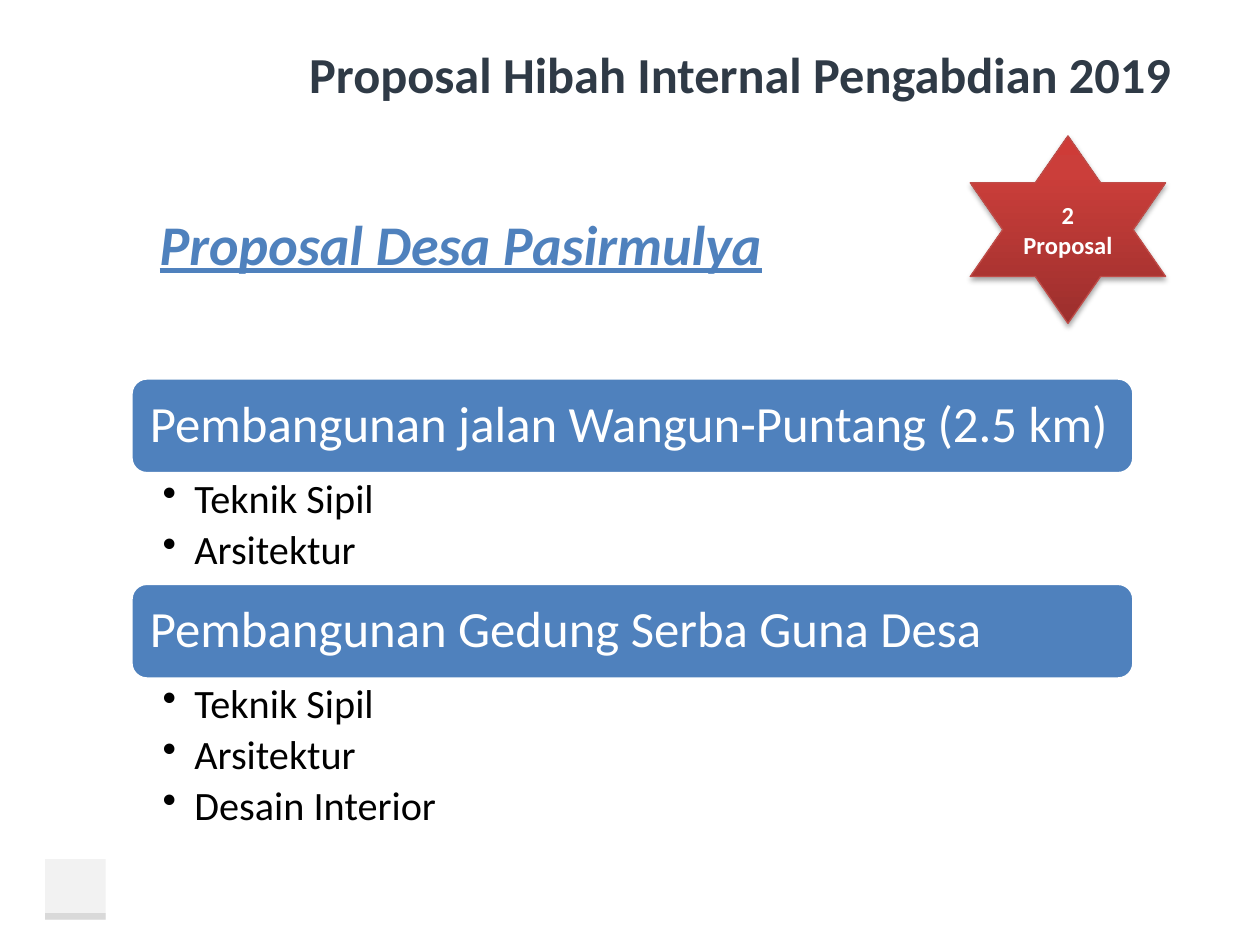
"""Build the slide on the village proposals for the 2019 internal community service grant."""
from copy import deepcopy

from lxml.etree import SubElement
from pptx import Presentation
from pptx.dml.color import RGBColor
from pptx.enum.shapes import MSO_SHAPE as Shape
from pptx.enum.text import MSO_ANCHOR as Anchor, PP_ALIGN as Align
from pptx.oxml.ns import qn
from pptx.util import Cm, Pt

color = RGBColor.from_string


def add_block(kind, left, top, width, height, fill):
    shape = slide.shapes.add_shape(kind, Cm(left), Cm(top), Cm(width), Cm(height))
    shape.shadow.inherit = False
    shape.fill.solid()
    shape.fill.fore_color.rgb = color(fill)
    shape.line.fill.background()
    return shape


def write(paragraph, text, size, fill, align=Align.LEFT, bold=False):
    paragraph.text = text
    paragraph.alignment = align
    font = paragraph.font
    font.name, font.size, font.bold = "Calibri", Pt(size), bold
    font.color.rgb = color(fill)


presentation = Presentation()
presentation.slide_width, presentation.slide_height = Cm(25.4), Cm(19.05)
slide = presentation.slides.add_slide(presentation.slide_layouts[5])

add_block(Shape.RECTANGLE, 0.91, 17.32, 1.22, 1.22, "F2F2F2")
add_block(Shape.RECTANGLE, 0.91, 18.41, 1.22, 0.13, "D9D9D9")

title = slide.shapes.title
title.left, title.top, title.width, title.height = Cm(5.72), Cm(0.61), Cm(18.42), Cm(1.73)
title.text_frame.vertical_anchor = Anchor.MIDDLE
write(title.text_frame.paragraphs[0], "Proposal Hibah Internal Pengabdian 2019", 28.8, "2F3A46", Align.CENTER, True)

subtitle = slide.shapes.add_textbox(Cm(2.97), Cm(4.09), Cm(16.71), Cm(1.63))
subtitle.text_frame.word_wrap = True
paragraph = subtitle.text_frame.paragraphs[0]
write(paragraph, "Proposal Desa Pasirmulya", 32, "4F81BD", bold=True)
paragraph.font.italic = paragraph.font.underline = True

star = add_block(Shape.STAR_6_POINT, 19.56, 2.74, 3.94, 3.78, "CB3E3A")
star.fill.gradient()
star.fill.gradient_angle = 90
stop_list = star.element.spPr.find(qn("a:gradFill")).find(qn("a:gsLst"))
stop_list.append(deepcopy(stop_list[0]))
for stop, (position, fill) in zip(star.fill.gradient_stops, [(0, "9C2F2D"), (0.8, "CB3E3A"), (1, "CE3B37")]):
    stop.position = position
    stop.color.rgb = color(fill)
star.line.color.rgb = color("BF4C48")
star.line.width = Pt(0.75)
effects = star.element.spPr.find(qn("a:effectLst"))
shadow = SubElement(effects, qn("a:outerShdw"), blurRad="40000", dist="23000", dir="5400000", rotWithShape="0")
shadow_color = SubElement(shadow, qn("a:srgbClr"), val="000000")
SubElement(shadow_color, qn("a:alpha"), val="35000")
star.text_frame.word_wrap = True
star.text_frame.vertical_anchor = Anchor.MIDDLE
write(star.text_frame.paragraphs[0], "2 Proposal", 14, "FFFFFF", Align.CENTER, True)

left, width, heading_height = 2.64, 20.22, 1.93
projects = [
    (7.62, 2.21, "Pembangunan jalan Wangun-Puntang (2.5 km)", ["Teknik Sipil", "Arsitektur"]),
    (11.76, 3.33, "Pembangunan Gedung Serba Guna Desa", ["Teknik Sipil", "Arsitektur", "Desain Interior"]),
]
for top, list_height, heading, departments in projects:
    bar = add_block(Shape.ROUNDED_RECTANGLE, left, top, width, heading_height, "4F81BD")
    bar.line.color.rgb = color("FFFFFF")
    bar.line.width = Pt(2)
    frame = bar.text_frame
    frame.word_wrap = True
    frame.vertical_anchor = Anchor.MIDDLE
    frame.margin_left = frame.margin_right = Cm(0.29)
    write(frame.paragraphs[0], heading, 29, "FFFFFF")
    frame.paragraphs[0].line_spacing = 0.9

    box = slide.shapes.add_textbox(Cm(left), Cm(top + heading_height), Cm(width), Cm(list_height))
    frame = box.text_frame
    frame.word_wrap = True
    frame.margin_left, frame.margin_right = Cm(0.64), Cm(0.58)
    frame.margin_top = frame.margin_bottom = Cm(0.1)
    for index, department in enumerate(departments):
        paragraph = frame.add_paragraph() if index else frame.paragraphs[0]
        paragraph.line_spacing = 0.9
        paragraph.space_after = Pt(4.2)
        properties = paragraph._p.get_or_add_pPr()
        properties.set("marL", str(Cm(0.64)))
        properties.set("indent", str(-Cm(0.64)))
        SubElement(properties, qn("a:buChar"), char="•")
        write(paragraph, department, 23, "000000")

presentation.save("out.pptx")
